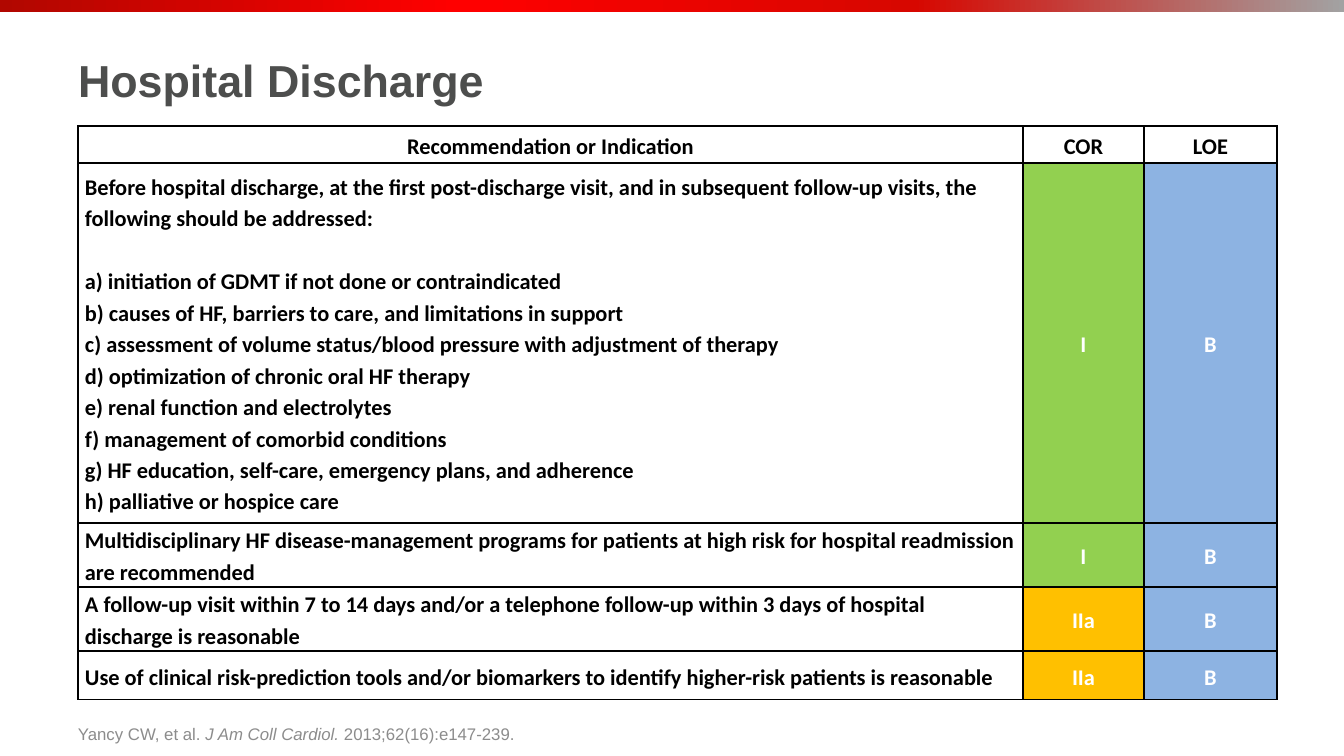
from copy import deepcopy

from lxml import etree
from pptx import Presentation
from pptx import util as u
from pptx.dml.color import RGBColor
from pptx.enum import shapes, text
from pptx.oxml.ns import qn

PX = 914400 / 100.8
LEFT, CENTER = text.PP_ALIGN.LEFT, text.PP_ALIGN.CENTER
MIDDLE, BOTTOM = text.MSO_ANCHOR.MIDDLE, text.MSO_ANCHOR.BOTTOM
BLACK, WHITE, GREEN, AMBER, BLUE = "000000", "FFFFFF", "92D050", "FFC000", "8DB3E2"
COR_FILLS = {"I": GREEN, "IIa": AMBER}

RED_BAND = [(0, "B10700"), (0.14, "D00400"), (0.34, "FF0000"), (0.68, "D70700"), (1, "A2A2A2")]
COLUMNS = [945, 121, 133]
ROW_HEIGHTS = [37, 360, 64, 64, 49]
HEADERS = ["Recommendation or Indication", "COR", "LOE"]
INTRO = ("Before hospital discharge, at the first post-discharge visit, and in subsequent "
         "follow-up visits, the following should be addressed:")
TOPICS = [
    "a) initiation of GDMT if not done or contraindicated",
    "b) causes of HF, barriers to care, and limitations in support",
    "c) assessment of volume status/blood pressure with adjustment of therapy",
    "d) optimization of chronic oral HF therapy",
    "e) renal function and electrolytes",
    "f) management of comorbid conditions",
    "g) HF education, self-care, emergency plans, and adherence",
    "h) palliative or hospice care",
]
RECOMMENDATIONS = [
    ([INTRO] + TOPICS, "I", "B"),
    (["Multidisciplinary HF disease-management programs for patients at high risk for "
      "hospital readmission are recommended"], "I", "B"),
    (["A follow-up visit within 7 to 14 days and/or a telephone follow-up within 3 days of "
      "hospital discharge is reasonable"], "IIa", "B"),
    (["Use of clinical risk-prediction tools and/or biomarkers to identify higher-risk "
      "patients is reasonable"], "IIa", "B"),
]


def px(n):
    return u.Emu(round(n * PX))


def rgb(value):
    return RGBColor.from_string(value)


def add_run(p, content, font="Arial", size=12, color=BLACK, bold=False, italic=False):
    r = p.add_run()
    r.text = content
    r.font.name, r.font.size = font, u.Pt(size)
    r.font.bold, r.font.italic = bold, italic
    r.font.color.rgb = rgb(color)


def add_borders(cell):
    tc_pr = cell._tc.get_or_add_tcPr()
    for i, side in enumerate(("lnL", "lnR", "lnT", "lnB")):
        ln = etree.Element(qn(f"a:{side}"), w=str(u.Pt(1)))
        fill = etree.SubElement(ln, qn("a:solidFill"))
        etree.SubElement(fill, qn("a:srgbClr"), val=BLACK)
        tc_pr.insert(i, ln)


class SlideBuilder:
    title_style = dict(size=32, color="4D4E4D", bold=True)
    cell_style = dict(font="Calibri", size=16, bold=True)
    citation_style = dict(size=12, color="8C8C8C")

    def __init__(self, prs):
        self.s = prs.slides.add_slide(prs.slide_layouts[5])

    def gradient_band(self, x, y, w, h, stops):
        sp = self.s.shapes.add_shape(shapes.MSO_SHAPE.RECTANGLE, px(x), px(y), px(w), px(h))
        sp.shadow.inherit = False
        sp.line.fill.background()
        sp.fill.gradient()
        sp.fill.gradient_angle = 0
        gs_list = next(sp._element.iter(qn("a:gsLst")))
        while len(gs_list) < len(stops):
            gs_list.append(deepcopy(gs_list[0]))
        for stop, (position, color) in zip(sp.fill.gradient_stops, stops):
            stop.position = position
            stop.color.rgb = rgb(color)

    def title(self, content, x, y, w, h):
        sp = self.s.shapes.title
        sp.left, sp.top, sp.width, sp.height = px(x), px(y), px(w), px(h)
        tf = sp.text_frame
        tf.vertical_anchor = MIDDLE
        p = tf.paragraphs[0]
        p.alignment = LEFT
        add_run(p, content, **self.title_style)

    def citation(self, runs, x, y, w, h):
        tf = self.s.shapes.add_textbox(px(x), px(y), px(w), px(h)).text_frame
        tf.word_wrap = True
        tf.vertical_anchor = BOTTOM
        for content, italic in runs:
            add_run(tf.paragraphs[0], content, italic=italic, **self.citation_style)

    def cell(self, cell, lines, fill=WHITE, color=BLACK, align=CENTER):
        """Fill a cell; a second line starts a list, one line's gap below the first."""
        cell.fill.solid()
        cell.fill.fore_color.rgb = rgb(fill)
        cell.vertical_anchor = MIDDLE
        cell.margin_left = cell.margin_right = px(7)
        cell.margin_top = cell.margin_bottom = 0
        tf = cell.text_frame
        for i, line in enumerate(lines):
            p = tf.add_paragraph() if i else tf.paragraphs[0]
            p.alignment, p.line_spacing = align, 1.15
            if i == 1:
                p.space_before = u.Pt(22.4)
            add_run(p, line, color=color, **self.cell_style)
        add_borders(cell)

    def table(self, x, y):
        frame = self.s.shapes.add_table(len(ROW_HEIGHTS), len(COLUMNS), px(x), px(y),
                                        px(sum(COLUMNS)), px(sum(ROW_HEIGHTS)))
        tbl = frame.table
        tbl.first_row = tbl.horz_banding = False
        for column, width in zip(tbl.columns, COLUMNS):
            column.width = px(width)
        for row, height in zip(tbl.rows, ROW_HEIGHTS):
            row.height = px(height)
        for i, header in enumerate(HEADERS):
            self.cell(tbl.cell(0, i), [header])
        for i, (lines, cor, loe) in enumerate(RECOMMENDATIONS, 1):
            self.cell(tbl.cell(i, 0), lines, align=LEFT)
            self.cell(tbl.cell(i, 1), [cor], COR_FILLS[cor], WHITE)
            self.cell(tbl.cell(i, 2), [loe], BLUE, WHITE)


def main():
    prs = Presentation()
    prs.slide_width, prs.slide_height = px(1344), px(756)
    slide = SlideBuilder(prs)
    slide.gradient_band(0, 0, 1344, 12, RED_BAND)
    slide.title("Hospital Discharge", 68, 7, 1184, 146)
    slide.citation([("Yancy CW, et al. ", False), ("J Am Coll Cardiol. ", True),
                    ("2013;62(16):e147-239.", False)], 68, 701, 994, 48)
    slide.table(78, 126)
    prs.save("out.pptx")


if __name__ == "__main__":
    main()
